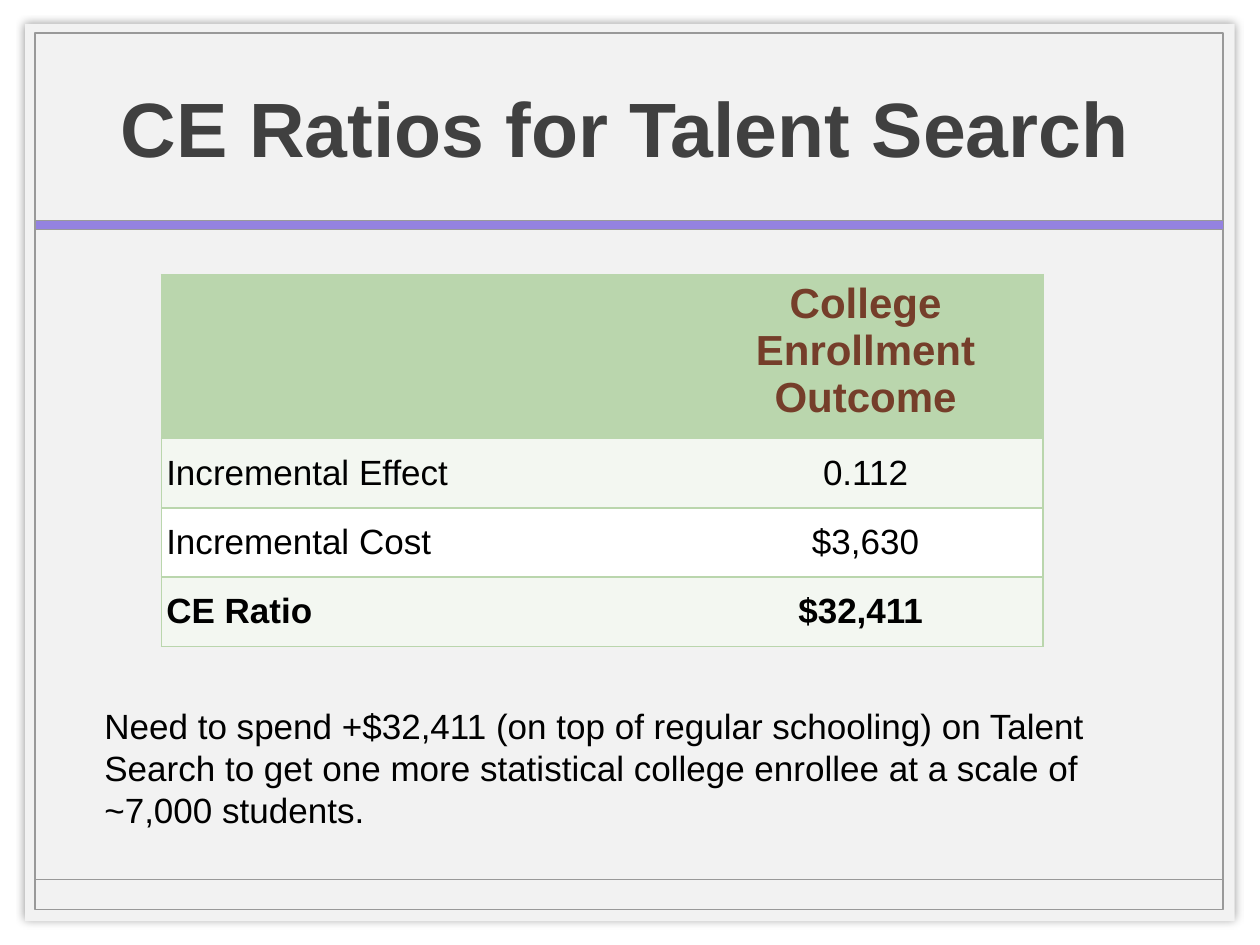
import pptx
import pptx.util
import pptx.dml.color
import pptx.enum.shapes
import pptx.enum.text
import pptx.oxml
import pptx.oxml.ns

Color = pptx.dml.color.RGBColor
Align = pptx.enum.text.PP_ALIGN
Anchor = pptx.enum.text.MSO_ANCHOR
Shape = pptx.enum.shapes.MSO_SHAPE

WHITE = Color(0xFF, 0xFF, 0xFF)
BLACK = Color(0x00, 0x00, 0x00)
PAPER = Color(0xF2, 0xF2, 0xF2)
GRAY = Color(0x99, 0x99, 0x99)
CHARCOAL = Color(0x40, 0x40, 0x40)
PURPLE = Color(0x94, 0x82, 0xE0)
GREEN = Color(0xBA, 0xD6, 0xAD)
PALE_GREEN = Color(0xF3, 0xF7, 0xF1)
BROWN = Color(0x75, 0x3E, 0x2A)

COLUMNS, ROWS = 100, 75
NAMESPACE = pptx.oxml.ns.nsdecls("a")

TITLE = {"size": pptx.util.Pt(44), "bold": True, "color": CHARCOAL}
HEADING = {"size": pptx.util.Pt(24), "bold": True, "color": BROWN}
BODY = {"size": pptx.util.Pt(20), "bold": False, "color": BLACK}
STRONG = {**BODY, "bold": True}


class SlideBuilder:
    font_name = "Arial"

    def __init__(self, deck):
        self.unit_x = deck.slide_width / COLUMNS
        self.unit_y = deck.slide_height / ROWS
        self.page = deck.slides.add_slide(deck.slide_layouts[6])

    def x(self, columns):
        return round(columns * self.unit_x)

    def y(self, rows):
        return round(rows * self.unit_y)

    def area(self, left, top, width, height):
        return self.x(left), self.y(top), self.x(width), self.y(height)

    def paragraphs(self, frame, lines, style, align):
        for index, line in enumerate(lines):
            para = frame.paragraphs[0] if index == 0 else frame.add_paragraph()
            para.alignment = align
            span = para.add_run()
            span.text = line
            span.font.name = self.font_name
            for name, value in style.items():
                if name == "color":
                    span.font.color.rgb = value
                else:
                    setattr(span.font, name, value)

    def rectangle(self, place, fill=None, line_width=0):
        box = self.page.shapes.add_shape(Shape.RECTANGLE, *self.area(*place))
        box.shadow.inherit = False
        if fill is None:
            box.fill.background()
        else:
            box.fill.solid()
            box.fill.fore_color.rgb = fill
        if line_width:
            box.line.color.rgb = GRAY
            box.line.width = pptx.util.Pt(line_width)
        else:
            box.line.fill.background()
        return box

    def card(self, place, fill):
        box = self.rectangle(place, fill)
        effects = box._element.spPr.find(pptx.oxml.ns.qn("a:effectLst"))
        effects.append(pptx.oxml.parse_xml(
            f'<a:outerShdw {NAMESPACE} blurRad="{pptx.util.Pt(5)}" dist="0" dir="0" algn="ctr" rotWithShape="0">'
            '<a:srgbClr val="000000"><a:alpha val="40000"/></a:srgbClr></a:outerShdw>'))

    def rule(self, left, right, row):
        line = self.page.shapes.add_connector(
            pptx.enum.shapes.MSO_CONNECTOR.STRAIGHT,
            self.x(left), self.y(row), self.x(right), self.y(row))
        line.line.color.rgb = GRAY
        line.line.width = pptx.util.Pt(1)
        line._element.spPr.append(pptx.oxml.parse_xml(f"<a:effectLst {NAMESPACE}/>"))

    def text(self, place, line, style, align=Align.LEFT, anchor=Anchor.TOP):
        box = self.page.shapes.add_textbox(*self.area(*place))
        box.text_frame.word_wrap = True
        box.text_frame.vertical_anchor = anchor
        self.paragraphs(box.text_frame, [line], style, align)

    def borders(self, cell, open_side):
        properties = cell._tc.get_or_add_tcPr()
        for index, side in enumerate("LRTB"):
            paint = ("<a:noFill/>" if side == open_side else
                     f'<a:solidFill><a:srgbClr val="{GREEN}"/></a:solidFill>')
            properties.insert(index, pptx.oxml.parse_xml(
                f'<a:ln{side} {NAMESPACE} w="{pptx.util.Pt(1)}">{paint}</a:ln{side}>'))

    def table(self, place, widths, heights, records):
        grid = self.page.shapes.add_table(
            len(heights), len(widths), *self.area(*place)).table
        grid.first_row = grid.horz_banding = False
        for column, width in zip(grid.columns, widths):
            column.width = self.x(width)
        for row, height in zip(grid.rows, heights):
            row.height = self.y(height)
        margins = {"margin_left": self.x(0.4), "margin_right": self.x(0.4),
                   "margin_top": self.y(0.5), "margin_bottom": self.y(0.5)}
        for row, (fill, style, anchor, texts) in enumerate(records):
            for column, lines in enumerate(texts):
                cell = grid.cell(row, column)
                for name, value in {**margins, "vertical_anchor": anchor}.items():
                    setattr(cell, name, value)
                cell.fill.solid()
                cell.fill.fore_color.rgb = fill
                self.borders(cell, "L" if column else "R")
                self.paragraphs(cell.text_frame, lines, style,
                                Align.CENTER if column else Align.LEFT)


def main():
    deck = pptx.Presentation()
    deck.slide_width = pptx.util.Inches(10)
    deck.slide_height = pptx.util.Inches(7.5)
    slide = SlideBuilder(deck)
    left, width = 2.8, 94.3

    slide.card((2, 1.9, 96, 71.2), PAPER)
    slide.rectangle((left, 2.6, width, 69.6), line_width=1)
    slide.rule(left, left + width, 69.8)
    slide.rectangle((left, 17.5, width, 0.7), PURPLE, 0.25)
    slide.text((7.3, 2.7, 84.7, 14.7), "CE Ratios for Talent Search",
               TITLE, Align.CENTER, Anchor.MIDDLE)
    slide.table(
        (12.8, 21.8, 70, 28.7), (41.8, 28.2), (12.2, 5.5, 5.5, 5.5),
        [(GREEN, HEADING, Anchor.TOP, ([], ["College Enrollment", "Outcome"])),
         (PALE_GREEN, BODY, Anchor.MIDDLE, (["Incremental Effect"], ["0.112"])),
         (WHITE, BODY, Anchor.MIDDLE, (["Incremental Cost"], ["$3,630"])),
         (PALE_GREEN, STRONG, Anchor.MIDDLE, (["CE Ratio"], ["$32,411 "]))])
    slide.text((7.3, 55.4, 82.8, 11.1),
               "Need to spend +$32,411 (on top of regular schooling) on Talent Search "
               "to get one more statistical college enrollee at a scale of ~7,000 students.",
               BODY)
    deck.save("out.pptx")


if __name__ == "__main__":
    main()
